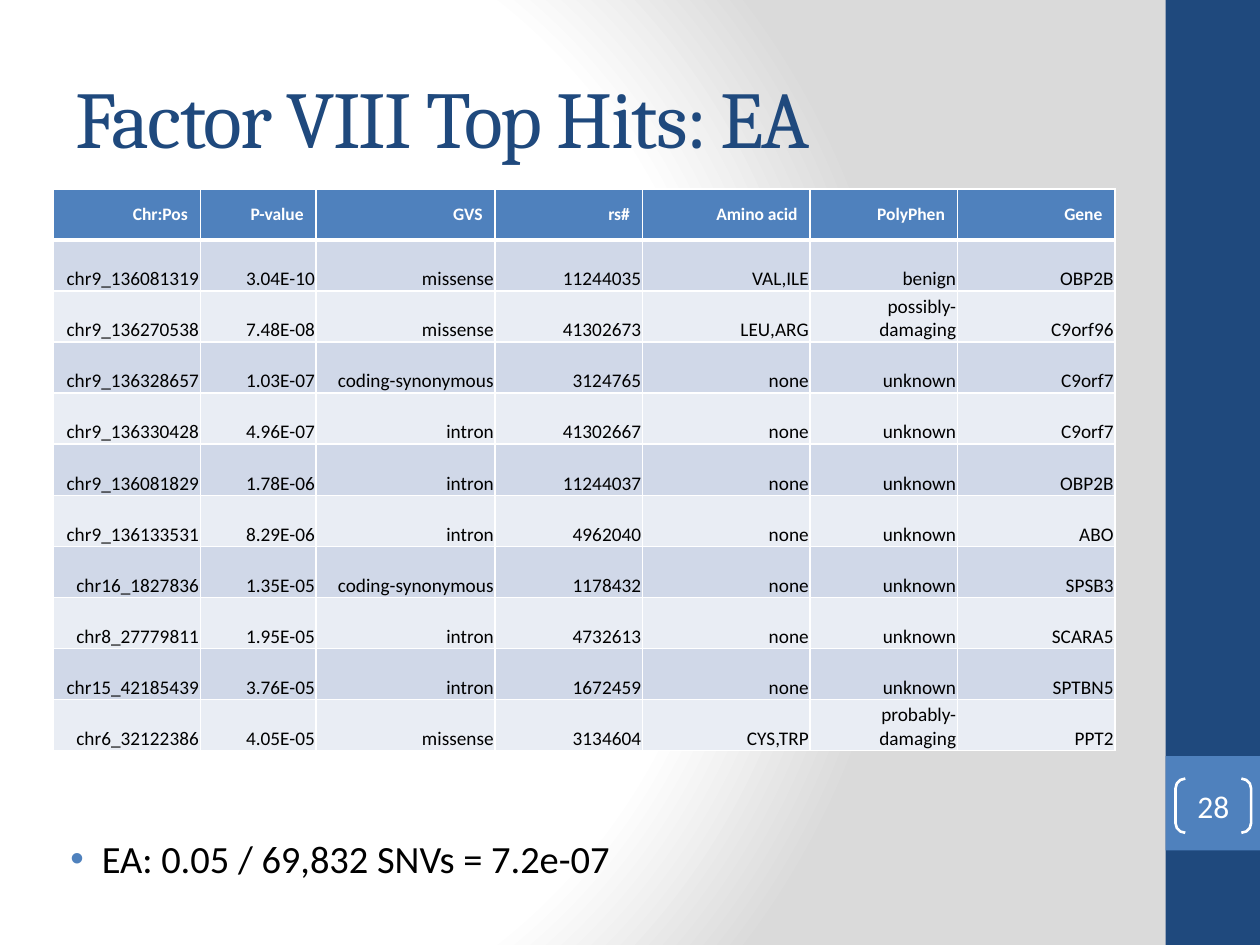
from lxml import etree
from pptx import Presentation
from pptx.dml.color import RGBColor
from pptx.enum.shapes import MSO_SHAPE
from pptx.enum.text import MSO_ANCHOR, PP_ALIGN
from pptx.oxml import parse_xml
from pptx.oxml.ns import nsdecls, qn
from pptx.util import Inches, Pt

RECT, BRACKETS = MSO_SHAPE.RECTANGLE, MSO_SHAPE.DOUBLE_BRACKET
TOP, MIDDLE, BOTTOM = MSO_ANCHOR.TOP, MSO_ANCHOR.MIDDLE, MSO_ANCHOR.BOTTOM
CENTER, RIGHT = PP_ALIGN.CENTER, PP_ALIGN.RIGHT

NAVY = RGBColor(0x1F, 0x49, 0x7D)
BLUE = RGBColor(0x4F, 0x81, 0xBD)
BAND_DARK = RGBColor(0xD0, 0xD8, 0xE8)
BAND_LIGHT = RGBColor(0xE9, 0xED, 0xF4)
WHITE = RGBColor(0xFF, 0xFF, 0xFF)
BLACK = RGBColor(0, 0, 0)
GRAY = RGBColor(0xDA, 0xDA, 0xDA)

COLUMN_WIDTHS = [1.17, 0.92, 1.42, 1.17, 1.33, 1.17, 1.25]
TABLE_HEIGHT = 4.46
HITS = [
    ["Chr:Pos", "P-value", "GVS", "rs#", "Amino acid", "PolyPhen", "Gene"],
    ["chr9_136081319", "3.04E-10", "missense", "11244035", "VAL,ILE", "benign", "OBP2B"],
    ["chr9_136270538", "7.48E-08", "missense", "41302673", "LEU,ARG", "possibly-damaging", "C9orf96"],
    ["chr9_136328657", "1.03E-07", "coding-synonymous", "3124765", "none", "unknown", "C9orf7"],
    ["chr9_136330428", "4.96E-07", "intron", "41302667", "none", "unknown", "C9orf7"],
    ["chr9_136081829", "1.78E-06", "intron", "11244037", "none", "unknown", "OBP2B"],
    ["chr9_136133531", "8.29E-06", "intron", "4962040", "none", "unknown", "ABO"],
    ["chr16_1827836", "1.35E-05", "coding-synonymous", "1178432", "none", "unknown", "SPSB3"],
    ["chr8_27779811", "1.95E-05", "intron", "4732613", "none", "unknown", "SCARA5"],
    ["chr15_42185439", "3.76E-05", "intron", "1672459", "none", "unknown", "SPTBN5"],
    ["chr6_32122386", "4.05E-05", "missense", "3134604", "CYS,TRP", "probably-damaging", "PPT2"],
]


def set_background(slide):
    """Circular gradient from white to gray."""
    slide.background.fill.solid()
    bg_pr = slide.background._cSld.bg.bgPr
    stops = "".join(
        f'<a:gs pos="{pos * 1000}"><a:srgbClr val="{color}"/></a:gs>'
        for pos, color in [(0, WHITE), (75, WHITE), (100, GRAY)])
    gradient = parse_xml(
        f'<a:gradFill {nsdecls("a")} rotWithShape="1"><a:gsLst>{stops}</a:gsLst>'
        '<a:path path="circle"><a:fillToRect l="20000" t="50000" r="100000" b="50000"/>'
        '</a:path></a:gradFill>')
    bg_pr.replace(bg_pr.find(qn("a:solidFill")), gradient)


def style_text(tf, text, font, size, color, bold=False, align=None):
    tf.text = text
    p = tf.paragraphs[0]
    p.alignment = align
    r = p.runs[0]
    r.font.name, r.font.size, r.font.bold = font, Pt(size), bold
    r.font.color.rgb = color
    return p


def add_block(slide, left, top, width, height, color):
    sp = slide.shapes.add_shape(
        RECT, Inches(left), Inches(top), Inches(width), Inches(height))
    sp.shadow.inherit = False
    sp.fill.solid()
    sp.fill.fore_color.rgb = color
    sp.line.fill.background()


def add_text(slide, left, top, width, height, text, font, size, color, anchor):
    sp = slide.shapes.add_textbox(
        Inches(left), Inches(top), Inches(width), Inches(height))
    tf = sp.text_frame
    tf.word_wrap = True
    tf.vertical_anchor = anchor
    return style_text(tf, text, font, size, color)


def add_page_number(slide, number):
    sp = slide.shapes.add_shape(
        BRACKETS, Inches(9.33), Inches(6.18), Inches(0.6), Inches(0.43))
    sp.adjustments[0] = 0.18
    sp.shadow.inherit = False
    sp.fill.background()
    sp.line.color.rgb = WHITE
    sp.line.width = Pt(1.5)
    tf = sp.text_frame
    tf.margin_left = tf.margin_right = tf.margin_top = tf.margin_bottom = 0
    tf.vertical_anchor = MIDDLE
    style_text(tf, number, "Calibri", 18, WHITE, align=CENTER)


def add_bullet(p):
    p.space_before = Pt(4)
    pPr = p._p.get_or_add_pPr()
    pPr.set("marL", str(Inches(0.38)))
    pPr.set("indent", str(Inches(-0.25)))
    color = etree.SubElement(pPr, qn("a:buClr"))
    etree.SubElement(color, qn("a:srgbClr"), val=str(BLUE))
    etree.SubElement(pPr, qn("a:buFont"), typeface="Arial")
    etree.SubElement(pPr, qn("a:buChar"), char="•")


def set_borders(cell, top=1, bottom=1):
    tcPr = cell._tc.get_or_add_tcPr()
    for side, width in [("L", 1), ("R", 1), ("T", top), ("B", bottom)]:
        ln = etree.SubElement(tcPr, qn(f"a:ln{side}"), w=str(Pt(width)))
        fill = etree.SubElement(ln, qn("a:solidFill"))
        etree.SubElement(fill, qn("a:srgbClr"), val=str(WHITE))


def style_cell(cell, row, text):
    header = row == 0
    set_borders(cell, top=3 if row == 1 else 1, bottom=3 if header else 1)
    cell.fill.solid()
    if header:
        cell.fill.fore_color.rgb = BLUE
        cell.vertical_anchor = MIDDLE
        style_text(cell.text_frame, text, "Calibri", 10, WHITE, True, RIGHT)
    else:
        cell.fill.fore_color.rgb = BAND_DARK if row % 2 else BAND_LIGHT
        cell.vertical_anchor = BOTTOM
        cell.margin_left = cell.margin_right = cell.margin_top = Inches(0.01)
        cell.margin_bottom = 0
        style_text(cell.text_frame, text, "Calibri", 11, BLACK, align=RIGHT)


def add_hits_table(slide):
    table = slide.shapes.add_table(
        len(HITS), len(COLUMN_WIDTHS), Inches(0.42), Inches(1.5),
        Inches(sum(COLUMN_WIDTHS)), Inches(TABLE_HEIGHT)).table
    for column, width in zip(table.columns, COLUMN_WIDTHS):
        column.width = Inches(width)
    for row, values in enumerate(HITS):
        for col, text in enumerate(values):
            style_cell(table.cell(row, col), row, text)


def main():
    prs = Presentation()
    prs.slide_width, prs.slide_height = Inches(10), Inches(7.5)
    slide = prs.slides.add_slide(prs.slide_layouts[6])
    set_background(slide)

    # Side band
    add_block(slide, 9.25, 0, 0.75, 7.5, NAVY)
    add_block(slide, 9.25, 6, 0.75, 0.75, BLUE)

    # Title, with slightly tightened letters
    title = add_text(slide, 0.5, 0.3, 8.33, 1.25, "Factor VIII Top Hits: EA",
                     "Cambria", 46, NAVY, MIDDLE)
    title.runs[0].font._element.set("spc", "-100")

    # Page number, threshold note and table
    add_page_number(slide, "28")
    note = add_text(slide, 0.33, 6.58, 8.33, 0.58, "EA: 0.05 / 69,832 SNVs = 7.2e-07",
                    "Calibri", 22, BLACK, TOP)
    add_bullet(note)
    add_hits_table(slide)

    prs.save("out.pptx")


if __name__ == "__main__":
    main()
